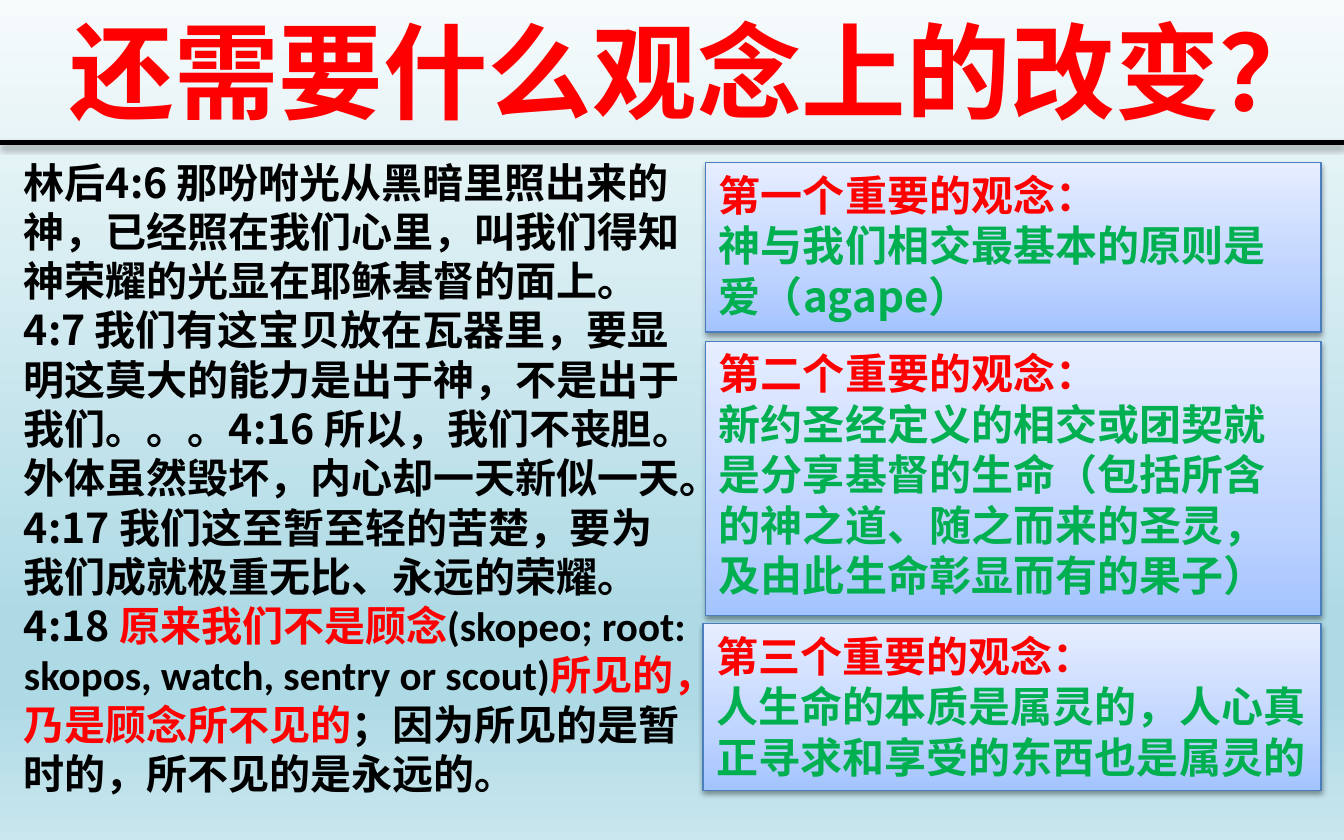
"""Build a slide on changes of concept: a scripture passage beside three key ideas."""
from dataclasses import dataclass

from lxml.etree import SubElement
from pptx import Presentation
from pptx.dml.color import RGBColor
from pptx.enum.shapes import MSO_CONNECTOR, MSO_SHAPE
from pptx.enum.text import MSO_ANCHOR, PP_ALIGN
from pptx.oxml import parse_xml
from pptx.oxml.ns import nsdecls, qn
from pptx.util import Inches, Pt


@dataclass(frozen=True)
class Theme:
    cjk: str = "Noto Sans CJK SC"
    latin: str = "Calibri"
    red: str = "FF0000"
    green: str = "00B050"
    black: str = "000000"
    card_line: str = "4B7EBC"
    title_size: float = 56
    verse_size: float = 22
    card_size: float = 22.5
    sky: tuple = ((0, "F6FBFC"), (74, "AEDAE5"), (83, "AEDAE5"), (100, "C9E6EE"))
    card_fill: tuple = ((0, "A4C4FF"), (35, "BFD4FF"), (100, "E6EEFF"))


theme = Theme()


def paint(fill, owner, stops, angle):
    fill.gradient()
    fill.gradient_angle = angle
    stop_list = owner.find(".//" + qn("a:gsLst"))
    stop_list.clear()
    for position, color in stops:
        stop = SubElement(stop_list, qn("a:gs"), pos=str(position * 1000))
        SubElement(stop, qn("a:srgbClr"), val=color)


def add_run(paragraph, text, size, color, font=theme.cjk):
    run = paragraph.add_run()
    run.text = text
    run.font.size = Pt(size)
    run.font.bold = True
    run.font.color.rgb = RGBColor.from_string(color)
    run.font.name = font
    SubElement(run.font._element, qn("a:ea"), typeface=font)


deck = Presentation()
deck.slide_width, deck.slide_height = Inches(10), Inches(6.25)
slide = deck.slides.add_slide(deck.slide_layouts[6])
paint(slide.background.fill, slide._element, theme.sky, 270)

divider = slide.shapes.add_connector(
    MSO_CONNECTOR.STRAIGHT, Inches(0), Inches(1.06), Inches(10), Inches(1.06))
divider.line.color.rgb = RGBColor.from_string(theme.black)
divider.line.width = Pt(3)
shadowed = [(divider, 1.8, 35)]

cards = [
    (5.25, 1.21, 4.58, 1.26, "第一个重要的观念：", "神与我们相交最基本的原则是爱（agape）"),
    (5.25, 2.54, 4.58, 2.04, "第二个重要的观念：",
     "新约圣经定义的相交或团契就是分享基督的生命（包括所含的神之道、随之而来的圣灵，及由此生命彰显而有的果子）"),
    (5.23, 4.64, 4.6, 1.24, "第三个重要的观念：",
     "人生命的本质是属灵的，人心真正寻求和享受的东西也是属灵的"),
]
for left, top, width, height, heading, idea in cards:
    card = slide.shapes.add_shape(
        MSO_SHAPE.RECTANGLE, Inches(left), Inches(top), Inches(width), Inches(height))
    paint(card.fill, card._element, theme.card_fill, 90)
    card.line.color.rgb = RGBColor.from_string(theme.card_line)
    card.line.width = Pt(0.75)
    shadowed.append((card, 1.6, 38))
    frame = card.text_frame
    frame.word_wrap = True
    frame.vertical_anchor = MSO_ANCHOR.TOP
    for text, color in ((heading, theme.red), (idea, theme.green)):
        paragraph = frame.paragraphs[0] if text == heading else frame.add_paragraph()
        paragraph.alignment = PP_ALIGN.LEFT
        add_run(paragraph, text, theme.card_size, color)

for part, distance, opacity in shadowed:
    part._element.spPr.append(parse_xml(
        f'<a:effectLst {nsdecls("a")}><a:outerShdw blurRad="{Pt(3.1)}" dist="{Pt(distance)}" '
        f'dir="5400000" rotWithShape="0"><a:srgbClr val="{theme.black}">'
        f'<a:alpha val="{opacity * 1000}"/></a:srgbClr></a:outerShdw></a:effectLst>'))

passage = slide.shapes.add_textbox(Inches(0.08), Inches(1.12), Inches(5.17), Inches(4.91))
passage.text_frame.word_wrap = True
verses = passage.text_frame.paragraphs[0]
verses.space_after = Pt(12)
for text, color, font in (
    ("林后4:6 那吩咐光从黑暗里照出来的神，已经照在我们心里，叫我们得知神荣耀的光显在耶稣基督的面上。"
     "4:7 我们有这宝贝放在瓦器里，要显明这莫大的能力是出于神，不是出于我们。。。"
     "4:16 所以，我们不丧胆。外体虽然毁坏，内心却一天新似一天。"
     "4:17 我们这至暂至轻的苦楚，要为我们成就极重无比、永远的荣耀。4:18 ", theme.black, theme.cjk),
    ("原来我们不是顾念", theme.red, theme.cjk),
    ("(skopeo; root: skopos, watch, sentry or scout)", theme.black, theme.latin),
    ("所见的，乃是顾念所不见的", theme.red, theme.cjk),
    ("；因为所见的是暂时的，所不见的是永远的。", theme.black, theme.cjk),
):
    add_run(verses, text, theme.verse_size, color, font)

title = slide.shapes.add_textbox(Inches(0.42), Inches(0), Inches(9.42), Inches(1.04))
title.text_frame.word_wrap = True
add_run(title.text_frame.paragraphs[0], "还需要什么观念上的改变？", theme.title_size, theme.red)

deck.save("out.pptx")
